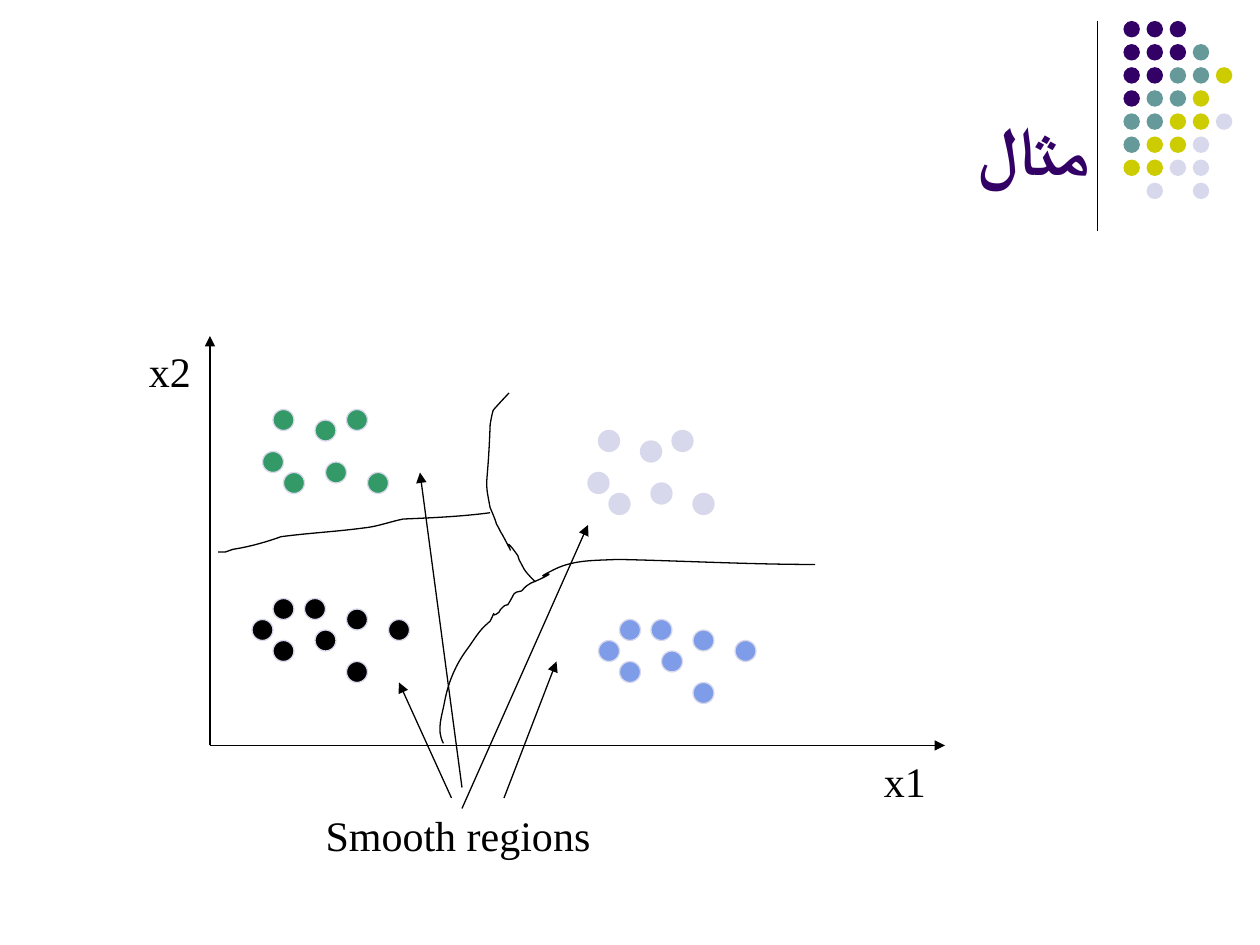
import lxml.etree
import pptx
import pptx.dml.color
import pptx.enum.shapes
import pptx.enum.text
import pptx.oxml.ns
import pptx.util

Pt = pptx.util.Pt
qn = pptx.oxml.ns.qn
add = lxml.etree.SubElement

BLACK, PALE = "000000", "D8D8EC"


def paint(fill, shade):
    fill.solid()
    fill.fore_color.rgb = pptx.dml.color.RGBColor.from_string(shade)


def dot(left, top, size, shade, edge=None):
    oval = slide.shapes.add_shape(
        pptx.enum.shapes.MSO_SHAPE.OVAL, Pt(left), Pt(top), Pt(size), Pt(size))
    oval.shadow.inherit = False
    paint(oval.fill, shade)
    if edge:
        paint(oval.line.fill, edge)
        oval.line.width = Pt(0.75)
    else:
        oval.line.fill.background()


deck = pptx.Presentation()
deck.slide_width, deck.slide_height = Pt(720), Pt(540)
slide = deck.slides.add_slide(deck.slide_layouts[6])

# Corner grid of dots: one letter per colour
hues = {"v": "330066", "t": "669999", "y": "CCCC00", "p": PALE}
grid = ["vvv", "vvvt", "vvtty", "vtty", "ttyyp", "tyyp", "yypp", " p p"]
for row, marks in enumerate(grid):
    for col, mark in enumerate(marks):
        if mark in hues:
            dot(642 + 13.2 * col, 12 + 13.2 * row, 9.4, hues[mark])

# Clusters, in steps of 6 points; the left ones repeat the right ones, shifted
upper = [(56, 45), (57, 41), (58, 47), (62, 46), (64, 41), (66, 47), (61, 42)]
lower = [(57, 61), (59, 63), (63, 62), (59, 59), (66, 60), (70, 61), (66, 65),
         (62, 59)]
groups = [(upper, 0, 0, PALE), (lower, 0, 0, "7E9CE8"),
          (upper, -31, -2, "339966"), (lower, -33, -2, BLACK)]
for spots, right, down, shade in groups:
    for x, y in spots:
        dot(6 * (x + right), 6 * (y + down), 12, shade, PALE)

# Region borders: a start, then three points for each Bezier curve
borders = [
    [(253.4, 424.8),
     (249.1, 416.9), (252.7, 409), (254.2, 400.3),
     (256.3, 389.5), (260.6, 379.4), (267.1, 370.8),
     (269.3, 367.9), (271.4, 364.3), (274.3, 360.7),
     (275.8, 358.6), (280.1, 355), (280.1, 355),
     (285.1, 344.9), (278.6, 355), (285.1, 349.9),
     (285.8, 349.2), (285.8, 347.8), (287.3, 347),
     (288, 346.3), (288.7, 345.6), (290.2, 345.6),
     (295.2, 337.7), (292.3, 339.1), (298.1, 337.7),
     (302.4, 332.6), (303.8, 333.4), (309.6, 330.5),
     (322.6, 324), (299.5, 334.1), (316.8, 325.4),
     (328.3, 319.7), (340.6, 320.4), (352.8, 319.7),
     (386.6, 320.4), (428.4, 322.6), (465.8, 322.6)],
    [(306, 332.6),
     (303.1, 329.8), (299.5, 326.2), (298.1, 322.6),
     (296.6, 321.1), (296.6, 319), (295.9, 317.5),
     (283, 299.5), (298.8, 327.6), (287.3, 306),
     (285.8, 303.8), (285.1, 301.7), (283.7, 299.5),
     (283, 296.6), (280.1, 290.2), (280.1, 290.2),
     (276.5, 271.4), (278.6, 283), (280.1, 242.6),
     (280.1, 242.6), (281.5, 234), (282.2, 234),
     (282.2, 234), (288.7, 226.8), (290.9, 224.6)],
    [(280.1, 293),
     (263.5, 295.2), (247, 295.9), (230.4, 296.6),
     (223.2, 298.1), (215.3, 301), (208.1, 301.7),
     (192.2, 303.8), (176.4, 304.6), (160.6, 306.7),
     (152.6, 309.6), (142.6, 312.5), (133.2, 313.9),
     (126.7, 316.1), (130.3, 315.4), (124.6, 315.4)],
]
for border in borders:
    start, *rest = [(Pt(x), Pt(y)) for x, y in border]
    pen = slide.shapes.build_freeform(*start)
    pen.add_line_segments(rest, close=False)
    curve = pen.convert_to_shape()
    curve.shadow.inherit = False
    curve.fill.background()
    paint(curve.line.fill, BLACK)
    curve.line.width = Pt(0.75)
    # Turn each three straight steps into one cubic curve
    track = next(curve._element.iter(qn("a:path")))
    steps = list(track)[1:]
    for i in range(0, len(steps), 3):
        cubic = add(track, qn("a:cubicBezTo"))
        for step in steps[i:i + 3]:
            cubic.append(step[0])
            track.remove(step)

# Title rule, axes and pointers
lines = [(627, 12, 627, 132, False),
         (120, 426, 540, 426, True), (120, 426, 120, 192, True),
         (258, 456, 228, 390, True), (288, 456, 318, 378, True),
         (264, 462, 336, 300, True), (264, 450, 240, 270, True)]
for *ends, arrow in lines:
    line = slide.shapes.add_connector(
        pptx.enum.shapes.MSO_CONNECTOR.STRAIGHT, *map(Pt, ends))
    paint(line.line.fill, BLACK)
    line.line.width = Pt(0.75)
    if arrow:
        add(line.line._get_or_add_ln(), qn("a:tailEnd"), type="triangle")
    add(line._element.spPr, qn("a:effectLst"))

# Labels and title
texts = [("x1", 498, 428, 39, 36, 24, "Times New Roman", BLACK),
         ("x2", 78, 194, 39, 36, 24, "Times New Roman", BLACK),
         ("Smooth regions", 179, 459, 166, 36, 24, "Times New Roman", BLACK),
         ("مثال", 36, 9.4, 594, 102, 39, "Arial", "330066")]
for words, left, top, width, height, size, face, shade in texts:
    box = slide.shapes.add_textbox(Pt(left), Pt(top), Pt(width), Pt(height))
    frame = box.text_frame
    frame.text = words
    frame.word_wrap = False
    frame.auto_size = pptx.enum.text.MSO_AUTO_SIZE.SHAPE_TO_FIT_TEXT
    font = frame.paragraphs[0].runs[0].font
    font.size, font.name = Pt(size), face
    paint(font.fill, shade)

# The title, last of the texts, is Arabic and runs right to left
frame.word_wrap = True
frame.auto_size = pptx.enum.text.MSO_AUTO_SIZE.NONE
frame.vertical_anchor = pptx.enum.text.MSO_ANCHOR.BOTTOM
font.bold = True
add(font._element, qn("a:cs"), typeface="Arial")
title = frame.paragraphs[0]
title.alignment = pptx.enum.text.PP_ALIGN.RIGHT
title._p.get_or_add_pPr().set("rtl", "1")

deck.save("out.pptx")
